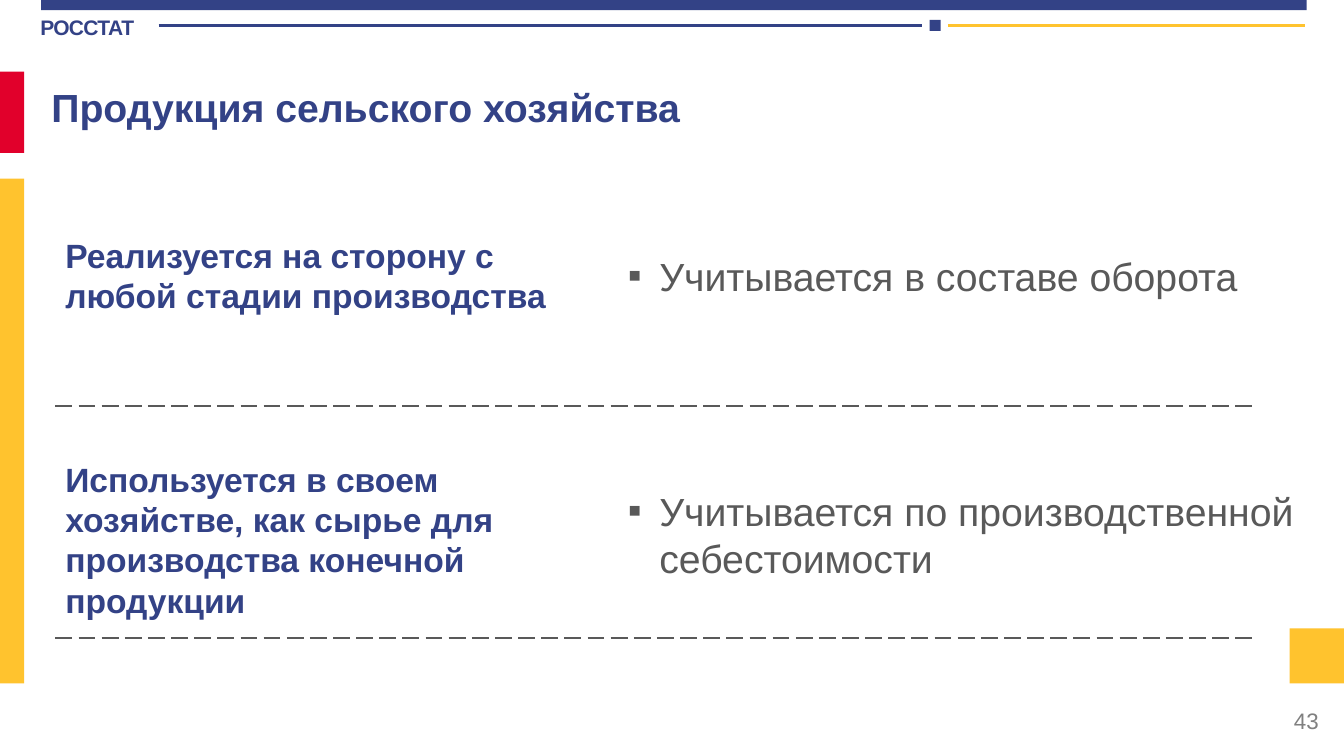
"""Build the slide on how agricultural output is accounted for."""
from dataclasses import dataclass

from lxml.etree import SubElement
from pptx import Presentation
from pptx.dml.color import RGBColor
from pptx.enum.dml import MSO_LINE_DASH_STYLE as Dash
from pptx.enum.shapes import MSO_CONNECTOR as Connector, MSO_SHAPE as Shape
from pptx.enum.text import MSO_ANCHOR as Anchor, PP_ALIGN as Align
from pptx.oxml.ns import qn
from pptx.util import Pt


@dataclass(frozen=True)
class Theme:
    navy: RGBColor = RGBColor(0x33, 0x42, 0x86)
    red: RGBColor = RGBColor(0xE1, 0x00, 0x2B)
    yellow: RGBColor = RGBColor(0xFF, 0xC3, 0x2E)
    dark: RGBColor = RGBColor(0x59, 0x59, 0x59)
    gray: RGBColor = RGBColor(0x80, 0x80, 0x80)
    font: str = "Arial"
    heading: int = 28
    case: int = 24
    number: int = 16
    agency: int = 15


theme = Theme()


def write(holder, box, text, size, color, bold=False):
    """Place a text holder and format its only paragraph."""
    holder.left, holder.top, holder.width, holder.height = map(Pt, box)
    frame = holder.text_frame
    frame.word_wrap = True
    frame.vertical_anchor = Anchor.TOP
    frame.text = text
    paragraph = frame.paragraphs[0]
    paragraph.alignment = Align.LEFT
    font = paragraph.runs[0].font
    font.name, font.size, font.bold = theme.font, Pt(size), bold
    font.color.rgb = color
    return paragraph


def rule(left, right, y, color, width):
    """Draw a horizontal line without a shadow."""
    line = slide.shapes.add_connector(Connector.STRAIGHT, Pt(left), Pt(y), Pt(right), Pt(y))
    line.line.color.rgb = color
    line.line.width = Pt(width)
    SubElement(line._element.spPr, qn("a:effectLst"))
    return line


deck = Presentation()
deck.slide_width, deck.slide_height = Pt(960), Pt(540)
slide = deck.slides.add_slide(deck.slide_layouts[5])

for left, top, width, height, color in (
    (29.3, 0, 904, 7.2, theme.navy),
    (0, 51.1, 17.2, 58.2, theme.red),
    (0, 127.6, 17.2, 360.5, theme.yellow),
    (921.2, 448.8, 38.8, 39.3, theme.yellow),
    (664, 14.2, 8, 8, theme.navy),
):
    block = slide.shapes.add_shape(Shape.RECTANGLE, Pt(left), Pt(top), Pt(width), Pt(height))
    block.shadow.inherit = False
    block.fill.solid()
    block.fill.fore_color.rgb = color
    block.line.fill.background()

rule(113.4, 658.4, 18, theme.navy, 2)
rule(677, 932.4, 18, theme.yellow, 2)

agency_box = slide.shapes.add_textbox(0, 0, 0, 0)
agency = write(agency_box, (28.8, 9.4, 82.8, 23), "РОССТАТ", theme.agency, theme.navy, True)
agency_box.text_frame.margin_left = agency_box.text_frame.margin_right = 0
agency_box.text_frame.margin_top, agency_box.text_frame.margin_bottom = Pt(0.9), 0
agency.runs[0]._r.get_or_add_rPr().set("spc", "-50")

write(slide.shapes.title, (29.5, 56.2, 873.4, 67), "Продукция сельского хозяйства",
      theme.heading, theme.navy, True)

for case, case_box, treatment, treatment_box, divider_y in (
    ("Реализуется на сторону с любой стадии производства", (39.6, 164.2, 397.4, 65.5),
     "Учитывается в составе оборота", (441.4, 176.4, 480.2, 41), 290),
    ("Используется в своем хозяйстве, как сырье для производства конечной продукции",
     (39.6, 324, 342.7, 123.8),
     "Учитывается по производственной себестоимости", (441.4, 344.2, 491.8, 74.9), 455.8),
):
    write(slide.shapes.add_textbox(0, 0, 0, 0), case_box, case, theme.case, theme.navy, True)
    accounting = write(slide.shapes.add_textbox(0, 0, 0, 0), treatment_box, treatment,
                       theme.heading, theme.dark)
    indents = accounting._p.get_or_add_pPr()
    indents.set("marL", str(Pt(22.5)))
    indents.set("indent", str(-Pt(22.5)))
    SubElement(indents, qn("a:buFont"), typeface=theme.font)
    SubElement(indents, qn("a:buChar"), char="▪")
    rule(39.6, 897.1, divider_y, theme.dark, 1.5).line.dash_style = Dash.LONG_DASH

number_box = slide.shapes.add_textbox(0, 0, 0, 0)
number = write(number_box, (733, 500.4, 216, 28.8), "43", theme.number, theme.gray)
number.alignment = Align.RIGHT
number_box.text_frame.vertical_anchor = Anchor.MIDDLE

deck.save("out.pptx")
